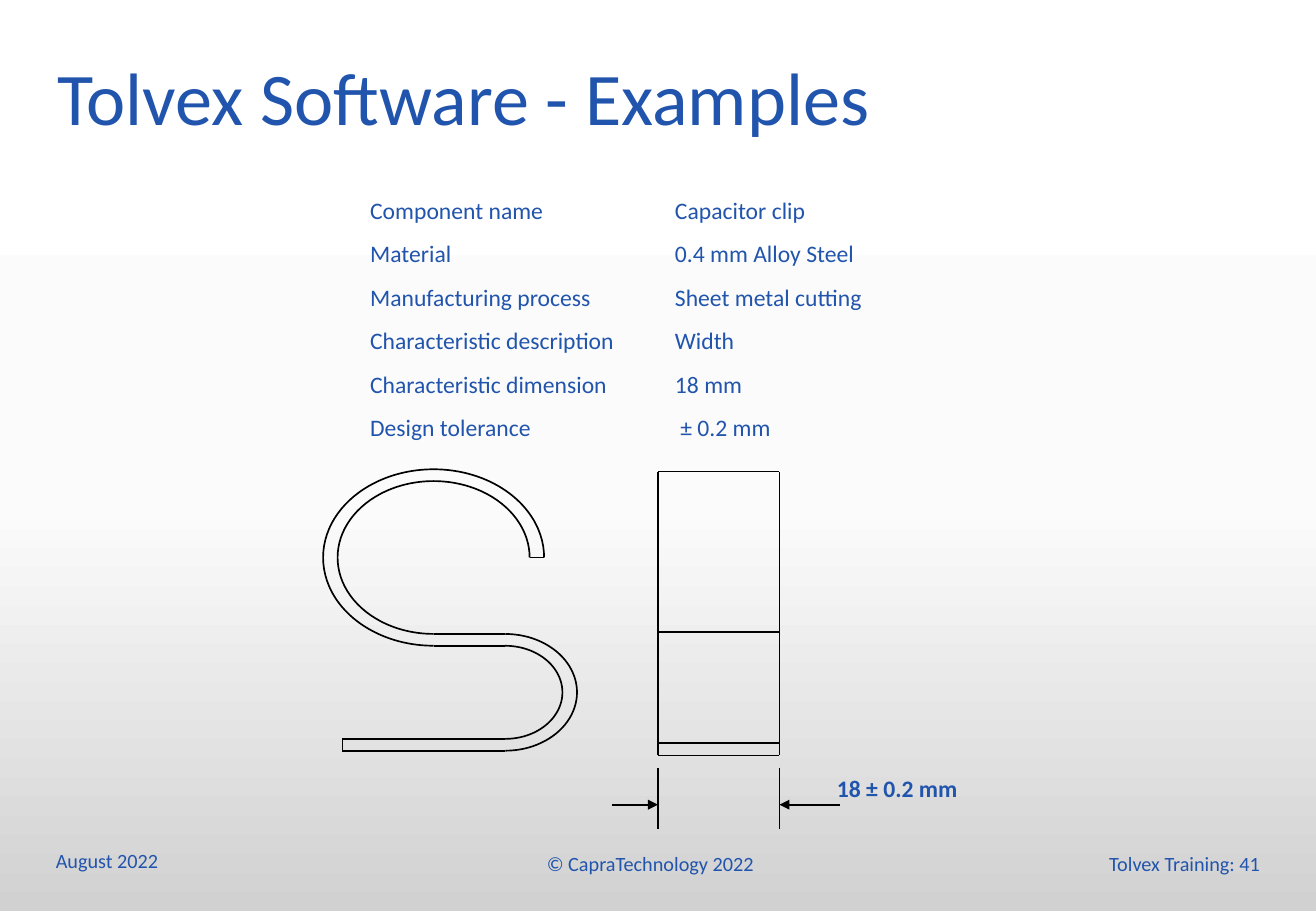
from copy import deepcopy
from lxml.etree import SubElement
from pptx import Presentation
from pptx.dml.color import RGBColor
from pptx.enum.shapes import MSO_CONNECTOR, MSO_SHAPE
from pptx.enum.text import MSO_ANCHOR, MSO_AUTO_SIZE, PP_ALIGN
from pptx.oxml.ns import qn
from pptx.util import Pt

BLUE = RGBColor(0x21, 0x54, 0xAC)
BLACK = RGBColor(0, 0, 0)
WHITE = RGBColor(0xFF, 0xFF, 0xFF)
PALE = RGBColor(0xFB, 0xFB, 0xFB)
GREY = RGBColor(0xD1, 0xD1, 0xD1)
NO_GRID = "{2D5ABB26-0587-4C30-8999-92F81FD0307C}"


class Sheet:
    font = "Calibri"
    ink = BLUE
    pen = Pt(1)

    def __init__(self, slide):
        self.slide = slide
        self.shapes = slide.shapes

    def back(self, stops):
        fill = self.slide.background.fill
        fill.gradient()
        fill.gradient_angle = 270
        ramp = self.slide.element.find(".//" + qn("a:gsLst"))
        while len(ramp) < len(stops):
            ramp.append(deepcopy(ramp[0]))
        for stop, (place, color) in zip(fill.gradient_stops, stops):
            stop.position = place
            stop.color.rgb = color

    def words(self, frame, text, size, bold=False, align=PP_ALIGN.LEFT):
        para = frame.paragraphs[0]
        para.alignment = align
        run = para.add_run()
        run.text = text
        run.font.name = self.font
        run.font.size = Pt(size)
        run.font.bold = bold
        run.font.color.rgb = self.ink

    def title(self, text, x, y, w, h):
        shape = self.shapes.title
        shape.left, shape.top, shape.width, shape.height = Pt(x), Pt(y), Pt(w), Pt(h)
        frame = shape.text_frame
        frame.auto_size = MSO_AUTO_SIZE.NONE
        frame.vertical_anchor = MSO_ANCHOR.TOP
        frame.margin_left = frame.margin_right = Pt(7.9)
        self.words(frame, text, 44)

    def label(self, text, x, y, w, h, size, anchor=MSO_ANCHOR.MIDDLE, **look):
        frame = self.shapes.add_textbox(Pt(x), Pt(y), Pt(w), Pt(h)).text_frame
        frame.word_wrap = True
        frame.vertical_anchor = anchor
        self.words(frame, text, size, **look)

    def table(self, rows, x, y, widths, high):
        frame = self.shapes.add_table(
            len(rows), len(widths), Pt(x), Pt(y), Pt(sum(widths)), Pt(high * len(rows)))
        grid = frame.table
        grid.first_row = grid.horz_banding = False
        frame.element.find(".//" + qn("a:tableStyleId")).text = NO_GRID
        for col, width in zip(grid.columns, widths):
            col.width = Pt(width)
        for r, row in enumerate(rows):
            grid.rows[r].height = Pt(high)
            for c, text in enumerate(row):
                cell = grid.cell(r, c)
                cell.fill.background()
                cell.vertical_anchor = MSO_ANCHOR.MIDDLE
                cell.margin_left = cell.margin_right = Pt(7.9)
                self.words(cell.text_frame, text, 14)

    def line(self, x1, y1, x2, y2, arrow=False):
        link = self.shapes.add_connector(
            MSO_CONNECTOR.STRAIGHT, Pt(x1), Pt(y1), Pt(x2), Pt(y2))
        link.line.width = self.pen
        link.line.color.rgb = BLACK
        props = link.element.spPr
        if arrow:
            SubElement(props.find(qn("a:ln")), qn("a:tailEnd"), type="triangle")
        SubElement(props, qn("a:effectLst"))

    def arc(self, x, y, rx, ry, start, end):
        curve = self.shapes.add_shape(
            MSO_SHAPE.ARC, Pt(x - rx), Pt(y - ry), Pt(2 * rx), Pt(2 * ry))
        curve.adjustments[0] = start * 0.6
        curve.adjustments[1] = end * 0.6
        curve.fill.background()
        curve.line.width = self.pen
        curve.line.color.rgb = BLACK
        curve.shadow.inherit = False


def clip(page):
    mid, bend, foot = 257, 299.5, 203
    high, low = 330.5, 410.4
    for rx, ry in ((65.5, 52.3), (56.9, 45.3)):
        page.arc(mid, high, rx, ry, 90, 0)
        page.line(mid, high + ry, bend, high + ry)
    for rx, ry in ((42.5, 34.6), (33.9, 27.6)):
        page.arc(bend, low, rx, ry, 270, 90)
        page.line(bend, low + ry, foot, low + ry)
    page.line(mid + 56.9, high, mid + 65.5, high)
    page.line(foot, low + 27.6, foot, low + 34.6)


def side(page):
    left, right, top, base = 390, 462, 279.5, 447.8
    for y in (top, 374.5, 440.6, base):
        page.line(left, y, right, y)
    for x in (left, right):
        page.line(x, top, x, base)
        page.line(x, 455, x, 491.5)
    page.line(363, 477, left, 477, arrow=True)
    page.line(498, 477, right, 477, arrow=True)
    page.label("18 ± 0.2 mm", 489, 455, 99.5, 21.6, 14, MSO_ANCHOR.TOP, bold=True)


def main():
    deck = Presentation()
    deck.slide_width, deck.slide_height = Pt(780), Pt(540)
    page = Sheet(deck.slides.add_slide(deck.slide_layouts[5]))
    page.back([(0, WHITE), (0.56, PALE), (1, GREY)])
    page.title("Tolvex Software - Examples", 26, 27, 654.5, 76)
    page.label("August 2022", 26, 500, 163, 20, 12)
    page.label("© CapraTechnology 2022", 262, 500, 247, 24, 12, align=PP_ALIGN.CENTER)
    page.label("Tolvex Training: 41", 578, 500, 176, 24, 12, align=PP_ALIGN.RIGHT)
    page.table([
        ("Component name", "Capacitor clip"),
        ("Material", "0.4 mm Alloy Steel"),
        ("Manufacturing process", "Sheet metal cutting"),
        ("Characteristic description", "Width"),
        ("Characteristic dimension", "18 mm"),
        ("Design tolerance", " ± 0.2 mm"),
    ], 211.5, 112.3, (180.7, 215.3), 25.8)
    clip(page)
    side(page)
    deck.save("out.pptx")


if __name__ == "__main__":
    main()
